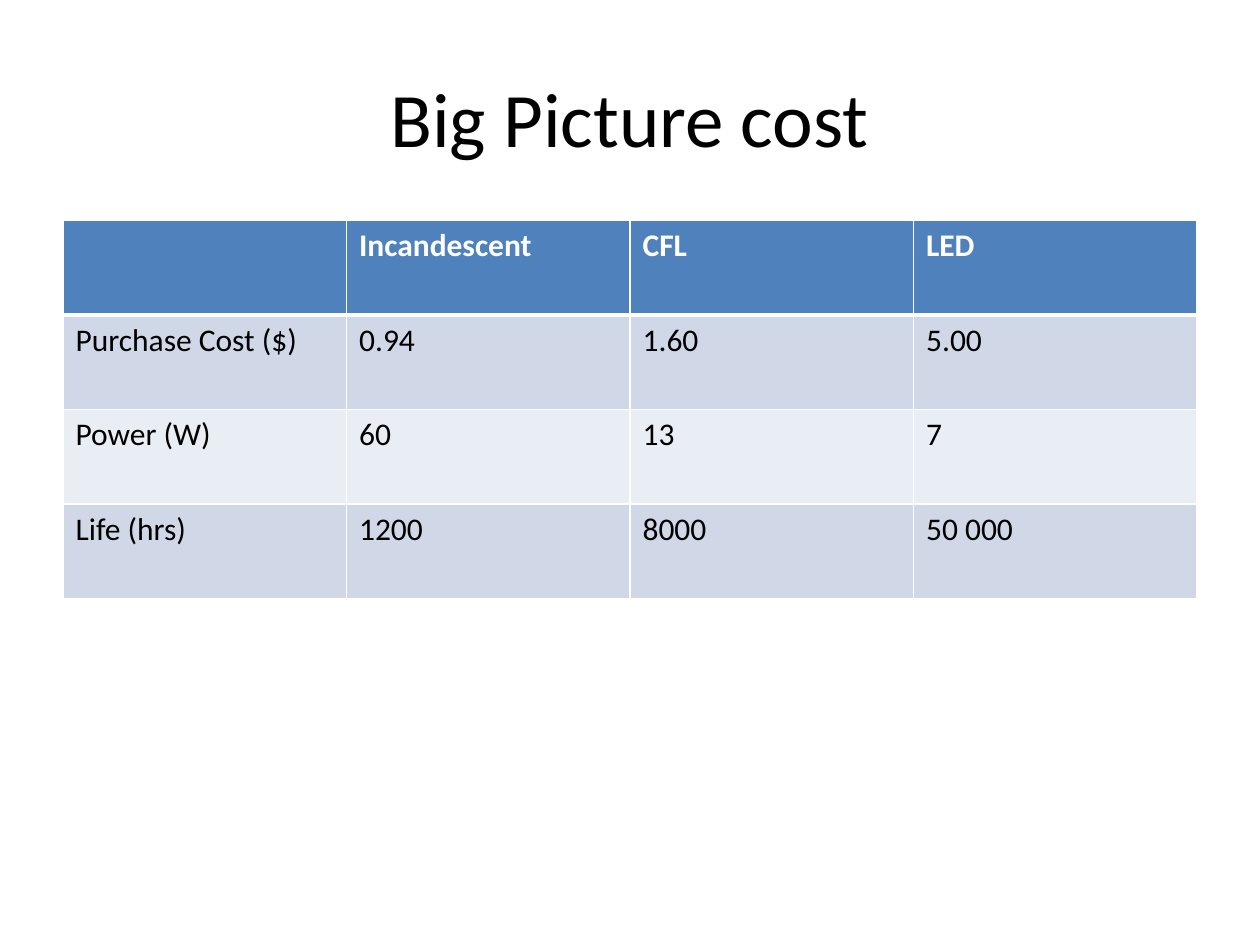
from dataclasses import dataclass

from lxml import etree
from pptx import Presentation
from pptx import util as u
from pptx.dml.color import RGBColor
from pptx.enum import text
from pptx.oxml import ns

BLACK = RGBColor(0x00, 0x00, 0x00)
WHITE = RGBColor(0xFF, 0xFF, 0xFF)
HEADER_BLUE = RGBColor(0x4F, 0x81, 0xBD)
BAND_DARK = RGBColor(0xD0, 0xD8, 0xE8)
BAND_LIGHT = RGBColor(0xE9, 0xED, 0xF4)

LEFT, WIDTH = u.Inches(0.5), u.Inches(9)
THIN, THICK = u.Pt(1), u.Pt(3)


@dataclass(frozen=True)
class TableRow:
    values: tuple[str, ...]
    fill: RGBColor
    color: RGBColor = BLACK
    bold: bool = False
    top: int = THIN
    bottom: int = THIN


ROWS = (
    TableRow(("", "Incandescent", "CFL", "LED"), HEADER_BLUE, WHITE, True, bottom=THICK),
    TableRow(("Purchase Cost ($)", "0.94", "1.60", "5.00"), BAND_DARK, top=THICK),
    TableRow(("Power (W)", "60", "13", "7"), BAND_LIGHT),
    TableRow(("Life (hrs)", "1200", "8000", "50 000"), BAND_DARK),
)


def format_font(font, size: int, color: RGBColor, bold: bool = False) -> None:
    for name, value in {"name": "Calibri", "size": u.Pt(size), "bold": bold}.items():
        setattr(font, name, value)
    font.color.rgb = color


def add_title(slide, wording: str) -> None:
    shape = slide.shapes.add_textbox(LEFT, u.Inches(0.3), WIDTH, u.Inches(1.25))
    frame = shape.text_frame
    frame.word_wrap = True
    frame.vertical_anchor = text.MSO_ANCHOR.MIDDLE
    paragraph = frame.paragraphs[0]
    paragraph.text = wording
    paragraph.alignment = text.PP_ALIGN.CENTER
    format_font(paragraph.font, 44, BLACK)


def add_borders(cell, top: int, bottom: int) -> None:
    properties = cell._tc.get_or_add_tcPr()
    for side, width in {"L": THIN, "R": THIN, "T": top, "B": bottom}.items():
        line = etree.SubElement(properties, ns.qn(f"a:ln{side}"), w=str(int(width)))
        fill = etree.SubElement(line, ns.qn("a:solidFill"))
        etree.SubElement(fill, ns.qn("a:srgbClr"), val=str(WHITE))


def fill_row(cells, row: TableRow) -> None:
    for cell, value in zip(cells, row.values):
        add_borders(cell, row.top, row.bottom)
        cell.fill.solid()
        cell.fill.fore_color.rgb = row.fill
        paragraph = cell.text_frame.paragraphs[0]
        paragraph.text = value
        format_font(paragraph.font, 18, row.color, row.bold)


def add_cost_table(slide, rows: tuple[TableRow, ...]) -> None:
    table = slide.shapes.add_table(
        len(rows), len(rows[0].values), LEFT, u.Inches(1.75), WIDTH, u.Inches(3)
    ).table
    for table_row, row in zip(table.rows, rows):
        fill_row(table_row.cells, row)


def main() -> None:
    presentation = Presentation()
    presentation.slide_width = u.Inches(10)
    presentation.slide_height = u.Inches(7.5)
    slide = presentation.slides.add_slide(presentation.slide_layouts[6])

    # Heading
    add_title(slide, "Big Picture cost")
    # Comparison of bulb types
    add_cost_table(slide, ROWS)

    presentation.save("out.pptx")


if __name__ == "__main__":
    main()
